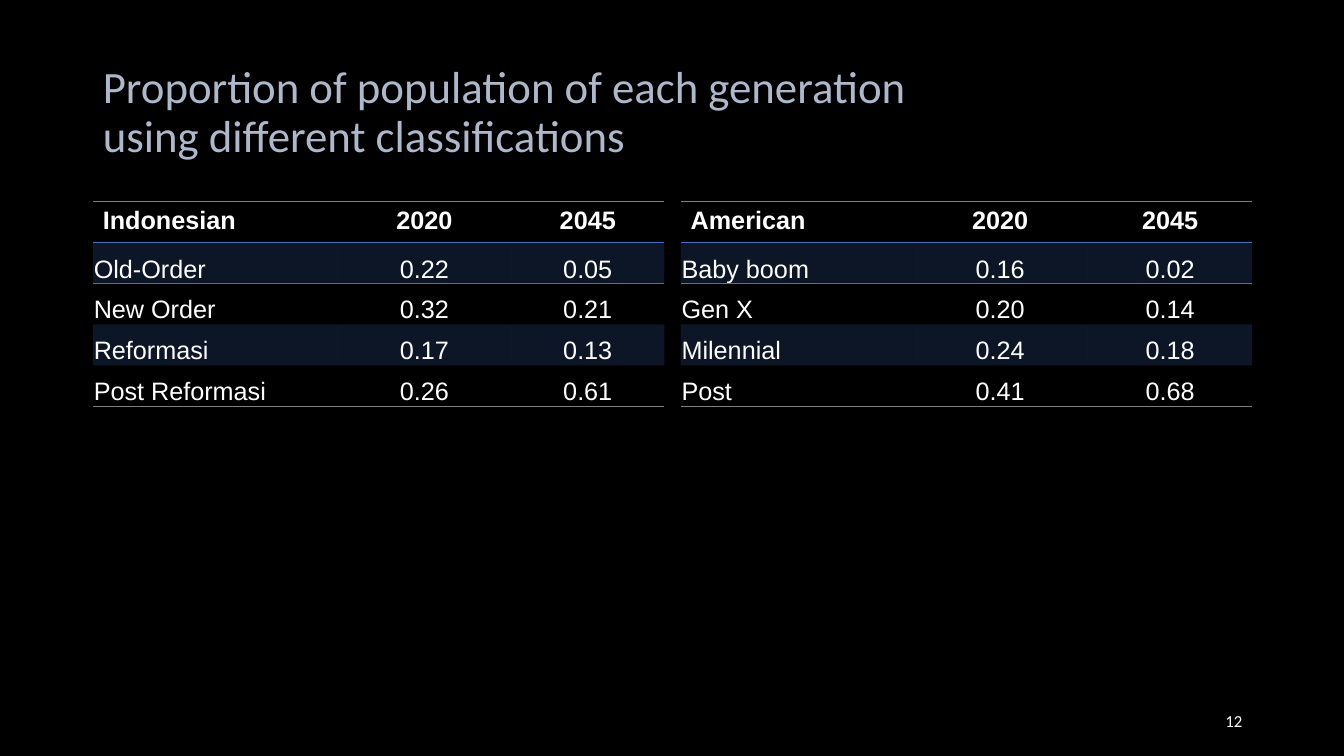
from dataclasses import dataclass

from lxml import etree
from pptx import Presentation
from pptx.dml.color import RGBColor
from pptx.enum.text import MSO_ANCHOR, MSO_AUTO_SIZE, PP_ALIGN
from pptx.oxml.ns import qn
from pptx.util import Inches, Pt

LEFT, CENTER, RIGHT = PP_ALIGN.LEFT, PP_ALIGN.CENTER, PP_ALIGN.RIGHT
TOP, MIDDLE, BOTTOM = MSO_ANCHOR.TOP, MSO_ANCHOR.MIDDLE, MSO_ANCHOR.BOTTOM
NO_FIT = MSO_AUTO_SIZE.NONE
NO_GRID = "{2D5ABB26-0587-4C30-8999-92F81FD0307C}"


@dataclass(frozen=True)
class Theme:
    back: str = "000000"
    title: str = "ADB9CA"
    text: str = "FFFFFF"
    band: str = "4472C4"
    rule: str = "7F7F7F"
    head_font: str = "Calibri"
    body_font: str = "Arial"
    title_size: int = 32
    body_size: int = 18
    note_size: int = 12
    band_alpha: int = 20


THEME = Theme()
TABLES = [
    (0.92, [2.43, 1.72, 1.52], [
        ("Indonesian", "2020", "2045"),
        ("Old-Order", "0.22", "0.05"),
        ("New Order", "0.32", "0.21"),
        ("Reformasi", "0.17", "0.13"),
        ("Post Reformasi", "0.26", "0.61"),
    ]),
    (6.75, [2.3, 1.74, 1.63], [
        ("American", "2020", "2045"),
        ("Baby boom", "0.16", "0.02"),
        ("Gen X", "0.20", "0.14"),
        ("Milennial", "0.24", "0.18"),
        ("Post", "0.41", "0.68"),
    ]),
]


def write(frame, text, font=THEME.body_font, size=THEME.body_size,
          color=THEME.text, bold=False, align=LEFT, space=1.0):
    para = frame.paragraphs[0]
    para.text = text
    para.alignment = align
    para.line_spacing = space
    for run in para.runs:
        run.font.name = font
        run.font.size = Pt(size)
        run.font.bold = bold
        run.font.color.rgb = RGBColor.from_string(color)


def place(shape, left, top, width, height):
    shape.left, shape.top = Inches(left), Inches(top)
    shape.width, shape.height = Inches(width), Inches(height)


def add_title(slide, text):
    title = slide.shapes.title
    place(title, 0.92, 0.4, 11.5, 1.45)
    frame = title.text_frame
    frame.auto_size = NO_FIT
    frame.word_wrap = True
    frame.vertical_anchor = MIDDLE
    write(frame, text, font=THEME.head_font, size=THEME.title_size,
          color=THEME.title, space=0.9)


def add_number(slide, text):
    box = slide.shapes.add_textbox(
        Inches(9.42), Inches(6.95), Inches(3), Inches(0.4))
    frame = box.text_frame
    frame.word_wrap = True
    frame.vertical_anchor = MIDDLE
    write(frame, text, font=THEME.head_font, size=THEME.note_size, align=RIGHT)


def shade(cell):
    cell.fill.solid()
    cell.fill.fore_color.rgb = RGBColor.from_string(THEME.band)
    color = cell._tc.tcPr.find(".//" + qn("a:srgbClr"))
    etree.SubElement(color, qn("a:alpha"), val=str(THEME.band_alpha * 1000))


def edge(cell, index, side, color):
    line = etree.Element(qn("a:" + side), w=str(Pt(1)))
    fill = etree.SubElement(line, qn("a:solidFill"))
    etree.SubElement(fill, qn("a:srgbClr"), val=color)
    cell._tc.get_or_add_tcPr().insert(index, line)


def style(cell, row, last):
    if row % 2:
        shade(cell)
    else:
        cell.fill.background()
    if row == 0:
        edge(cell, 0, "lnT", THEME.rule)
        edge(cell, 1, "lnB", THEME.band)
        cell.vertical_anchor = TOP
        return
    if row == 1:
        edge(cell, 0, "lnT", THEME.band)
    if row == last:
        edge(cell, 0, "lnB", THEME.rule)
    cell.vertical_anchor = BOTTOM
    cell.margin_left = cell.margin_right = cell.margin_top = Inches(0.01)
    cell.margin_bottom = 0


def add_grid(slide, left, widths, rows):
    frame = slide.shapes.add_table(
        len(rows), len(widths), Inches(left), Inches(2),
        Inches(sum(widths)), Inches(2.03))
    table = frame.table
    table.first_row = table.horz_banding = False
    table._tbl.tblPr.find(qn("a:tableStyleId")).text = NO_GRID
    for column, width in zip(table.columns, widths):
        column.width = Inches(width)
    for r, values in enumerate(rows):
        for c, value in enumerate(values):
            cell = table.cell(r, c)
            style(cell, r, len(rows) - 1)
            write(cell.text_frame, value, bold=r == 0,
                  align=CENTER if c else LEFT)


def main():
    deck = Presentation()
    deck.slide_width, deck.slide_height = Inches(13.33), Inches(7.5)
    slide = deck.slides.add_slide(deck.slide_layouts[5])
    slide.background.fill.solid()
    slide.background.fill.fore_color.rgb = RGBColor.from_string(THEME.back)
    add_title(slide, "Proportion of population of each generation \v"
                     "using different classifications")
    for left, widths, rows in TABLES:
        add_grid(slide, left, widths, rows)
    add_number(slide, "12")
    deck.save("out.pptx")


if __name__ == "__main__":
    main()
